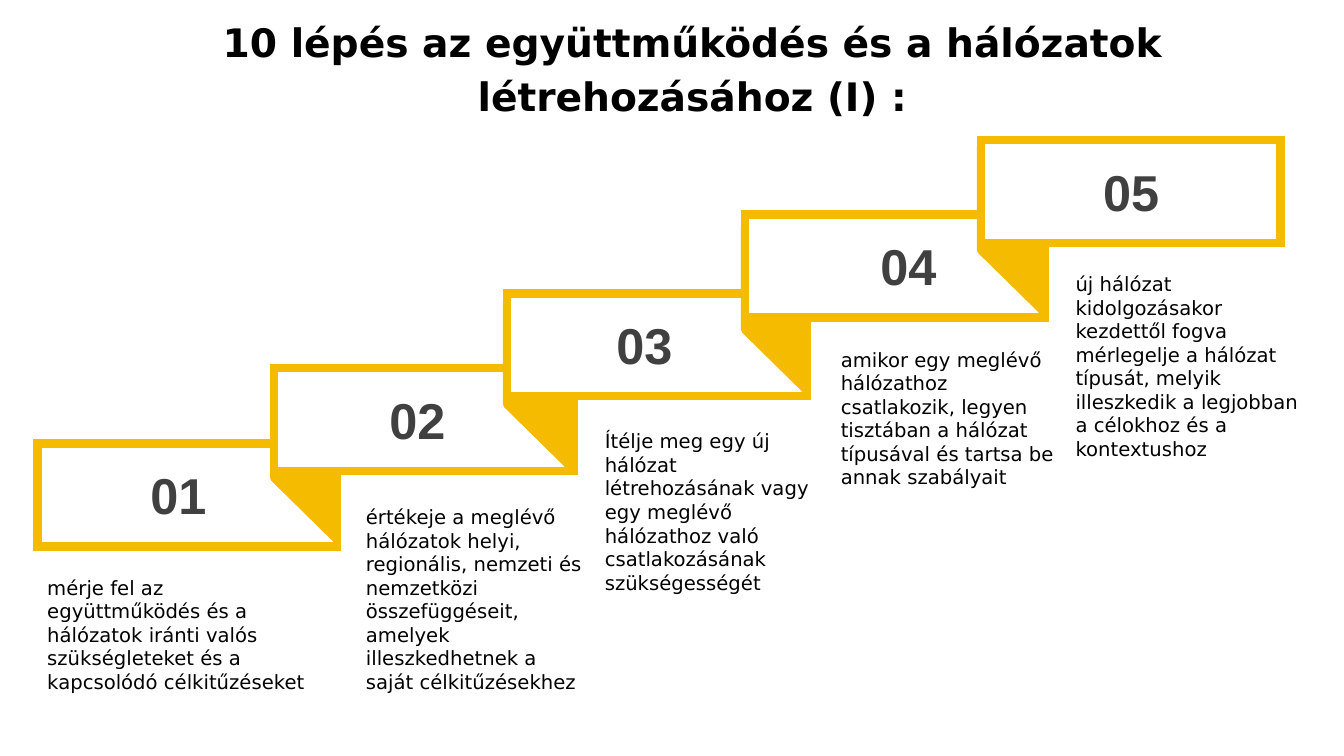
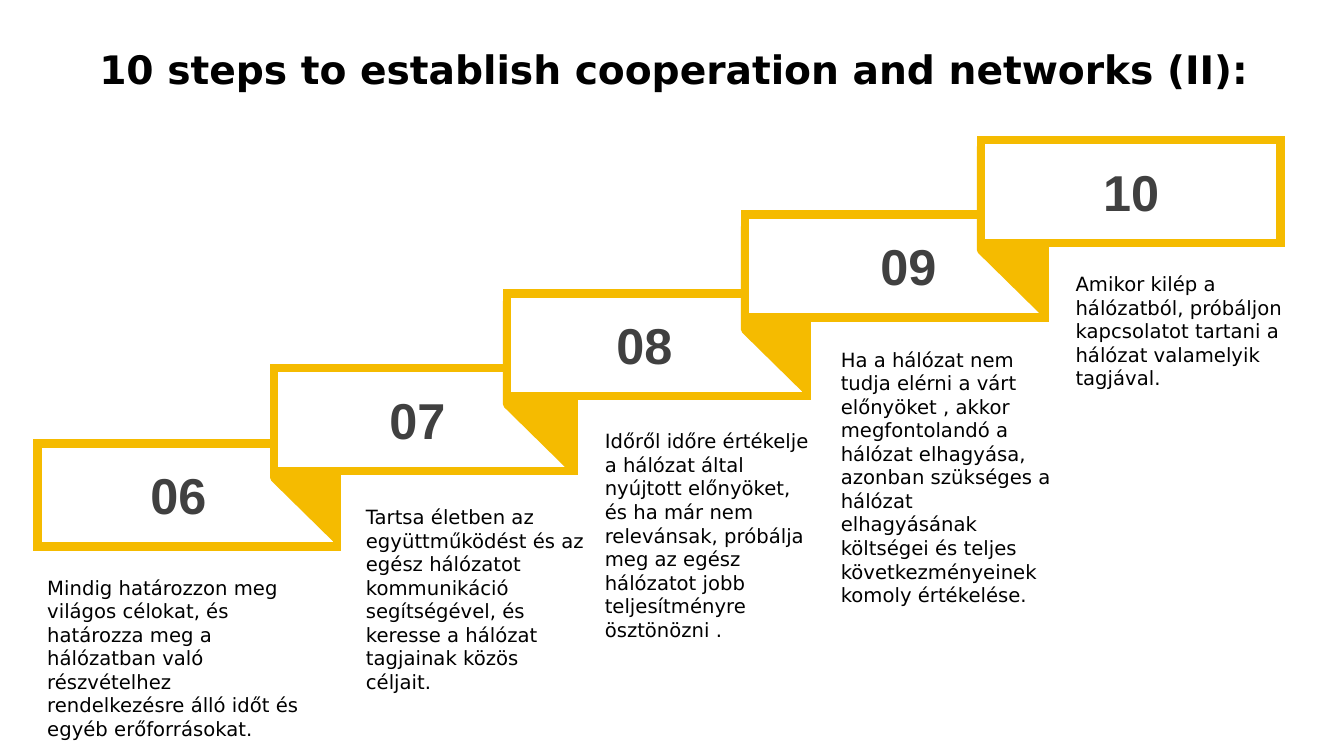
from dataclasses import dataclass

from lxml.etree import SubElement
from pptx import Presentation
from pptx.dml.color import RGBColor
from pptx.enum.shapes import MSO_SHAPE
from pptx.enum.text import MSO_ANCHOR, MSO_AUTO_SIZE, PP_ALIGN
from pptx.oxml.ns import qn
from pptx.util import Inches, Pt

WIDTH, HEIGHT = Inches(13.33), Inches(7.5)
TITLE_ONLY = 5
COLORS = {"gold": "F5BB00", "white": "FFFFFF", "number": "404040", "text": "000000"}
HEADING_FONT, NUMBER_FONT = "DejaVu Sans", "Arial"

PANEL_WIDTH, PANEL_HEIGHT = 22.28, 13.6
FOLD_WIDTH, FOLD_SLANT = 4.58, 8
NUMBER_WIDTH, NUMBER_HEIGHT, NUMBER_DROP = 6.3, 9.47, 2.1
LINE_HEIGHT, CAPTION_PADDING = 3.15, 1.33


@dataclass
class Step:
    """Panel position and the offsets of its parts, in percent of the slide."""
    left: float
    top: float
    fold_drop: float
    number_shift: float
    caption_shift: float
    caption_drop: float
    caption_width: float


STEPS = [
    Step(2.78, 58.67, 0, 7.35, 0, 16.8, 21.23),
    Step(20.41, 48.67, 0.93, 7.5, 6.08, 17.47, 17.85),
    Step(37.73, 38.8, 1.07, 7.06, 6.53, 17.33, 17.4),
    Step(55.44, 28.4, 1.6, 9, 6.38, 16.93, 17.4),
    Step(72.99, 18.53, 0.93, 8.03, 6.3, 16.8, 18.3),
]

SLIDES = [
    {
        "title": "10 lépés az együttműködés és a hálózatok létrehozásához (I) :",
        "title_box": (3.6, 3.33, 95.8, 10.53),
        "first": 1,
        "captions": [
            ("mérje fel az együttműködés és a hálózatok iránti valós "
             "szükségleteket és a kapcsolódó célkitűzéseket", 5),
            ("értékeje a meglévő hálózatok helyi, regionális, nemzeti és "
             "nemzetközi összefüggéseit, amelyek illeszkedhetnek a saját "
             "célkitűzésekhez", 8),
            ("Ítélje meg egy új hálózat létrehozásának vagy egy meglévő "
             "hálózathoz való csatlakozásának szükségességét", 7),
            ("amikor egy meglévő hálózathoz csatlakozik, legyen tisztában a "
             "hálózat típusával és tartsa be annak szabályait", 6),
            ("új hálózat kidolgozásakor kezdettől fogva mérlegelje a hálózat "
             "típusát, melyik illeszkedik a legjobban a célokhoz és a "
             "kontextushoz", 8),
        ],
    },
    {
        "title": "10 steps to establish cooperation and networks (II):",
        "title_box": (2.63, 3.33, 94.97, 10.53),
        "first": 6,
        "captions": [
            ("Mindig határozzon meg világos célokat, és határozza meg a "
             "hálózatban való részvételhez rendelkezésre álló időt és egyéb "
             "erőforrásokat.", 7),
            ("Tartsa életben az együttműködést és az egész hálózatot "
             "kommunikáció segítségével, és keresse a hálózat tagjainak "
             "közös céljait.", 8),
            ("Időről időre értékelje a hálózat által nyújtott előnyöket, és "
             "ha már nem relevánsak, próbálja meg az egész hálózatot jobb "
             "teljesítményre ösztönözni .", 9),
            ("Ha a hálózat nem tudja elérni a várt előnyöket , akkor "
             "megfontolandó a hálózat elhagyása, azonban szükséges a hálózat "
             "elhagyásának költségei és teljes következményeinek komoly "
             "értékelése.", 11),
            ("Amikor kilép a hálózatból, próbáljon kapcsolatot tartani a "
             "hálózat valamelyik tagjával.", 5),
        ],
    },
]


def across(share):
    """Turn a percentage of the slide width into a length."""
    return round(WIDTH * share / 100)


def down(share):
    """Turn a percentage of the slide height into a length."""
    return round(HEIGHT * share / 100)


def place(left, top, width, height):
    """Turn a box given in percent into lengths."""
    return across(left), down(top), across(width), down(height)


def write(frame, text, size, font, color, bold=False, align=PP_ALIGN.LEFT):
    """Write one formatted run into the first paragraph of a frame."""
    frame.word_wrap = True
    para = frame.paragraphs[0]
    para.alignment = align
    span = para.add_run()
    span.text = text
    span.font.size = Pt(size)
    span.font.name = font
    span.font.bold = bold
    span.font.color.rgb = RGBColor.from_string(COLORS[color])
    return para


def paint(shape, fill, join):
    """Give a shape its fill and the thick gold outline."""
    shape.shadow.inherit = False
    shape.fill.solid()
    shape.fill.fore_color.rgb = RGBColor.from_string(COLORS[fill])
    shape.line.color.rgb = RGBColor.from_string(COLORS["gold"])
    shape.line.width = Pt(6)
    SubElement(shape.line._get_or_add_ln(), qn(f"a:{join}"))


def add_title(page, text, box):
    """Place and format the title placeholder."""
    title = page.shapes.title
    title.left, title.top, title.width, title.height = place(*box)
    frame = title.text_frame
    frame.auto_size = MSO_AUTO_SIZE.NONE
    frame.vertical_anchor = MSO_ANCHOR.MIDDLE
    para = write(frame, text, 28, HEADING_FONT, "text", True, PP_ALIGN.CENTER)
    para.line_spacing = 1.15
    para.space_before = Pt(0)


def add_fold(ribbon, step):
    """Draw the slanted fold that hangs behind a panel's left end."""
    left, top = step.left, step.top + step.fold_drop
    right = left + FOLD_WIDTH
    corners = [
        (right, top + FOLD_SLANT),
        (right, top + FOLD_SLANT + PANEL_HEIGHT),
        (left, top + PANEL_HEIGHT),
    ]
    outline = ribbon.shapes.build_freeform(across(left), down(top))
    outline.add_line_segments([(across(x), down(y)) for x, y in corners])
    paint(outline.convert_to_shape(), "gold", "round")


def add_ribbon(page, steps):
    """Draw the rising staircase of panels joined by folds."""
    ribbon = page.shapes.add_group_shape()
    for index, step in enumerate(steps):
        if index:
            add_fold(ribbon, step)
        box = place(step.left, step.top, PANEL_WIDTH, PANEL_HEIGHT)
        panel = ribbon.shapes.add_shape(MSO_SHAPE.RECTANGLE, *box)
        paint(panel, "white", "miter")


def add_label(page, box, text, *style):
    """Add a text box that fits its text."""
    frame = page.shapes.add_textbox(*place(*box)).text_frame
    write(frame, text, *style)
    frame.auto_size = MSO_AUTO_SIZE.SHAPE_TO_FIT_TEXT


def add_step_text(page, step, number, caption, lines):
    """Put the number on a panel and the caption beneath it."""
    number_box = (step.left + step.number_shift, step.top + NUMBER_DROP,
                  NUMBER_WIDTH, NUMBER_HEIGHT)
    add_label(page, number_box, f"{number:02d}", 36, NUMBER_FONT, "number",
              True, PP_ALIGN.CENTER)
    caption_box = (step.left + step.caption_shift, step.top + step.caption_drop,
                   step.caption_width, lines * LINE_HEIGHT + CAPTION_PADDING)
    add_label(page, caption_box, caption, 14, HEADING_FONT, "text")


def add_staircase_slide(deck, content):
    """Build one slide with a title and five numbered steps."""
    page = deck.slides.add_slide(deck.slide_layouts[TITLE_ONLY])
    add_title(page, content["title"], content["title_box"])
    add_ribbon(page, STEPS)
    for index, (step, (caption, lines)) in enumerate(zip(STEPS, content["captions"])):
        add_step_text(page, step, content["first"] + index, caption, lines)


def main():
    """Build the deck and save it."""
    deck = Presentation()
    deck.slide_width, deck.slide_height = WIDTH, HEIGHT
    for content in SLIDES:
        add_staircase_slide(deck, content)
    deck.save("out.pptx")


if __name__ == "__main__":
    main()
